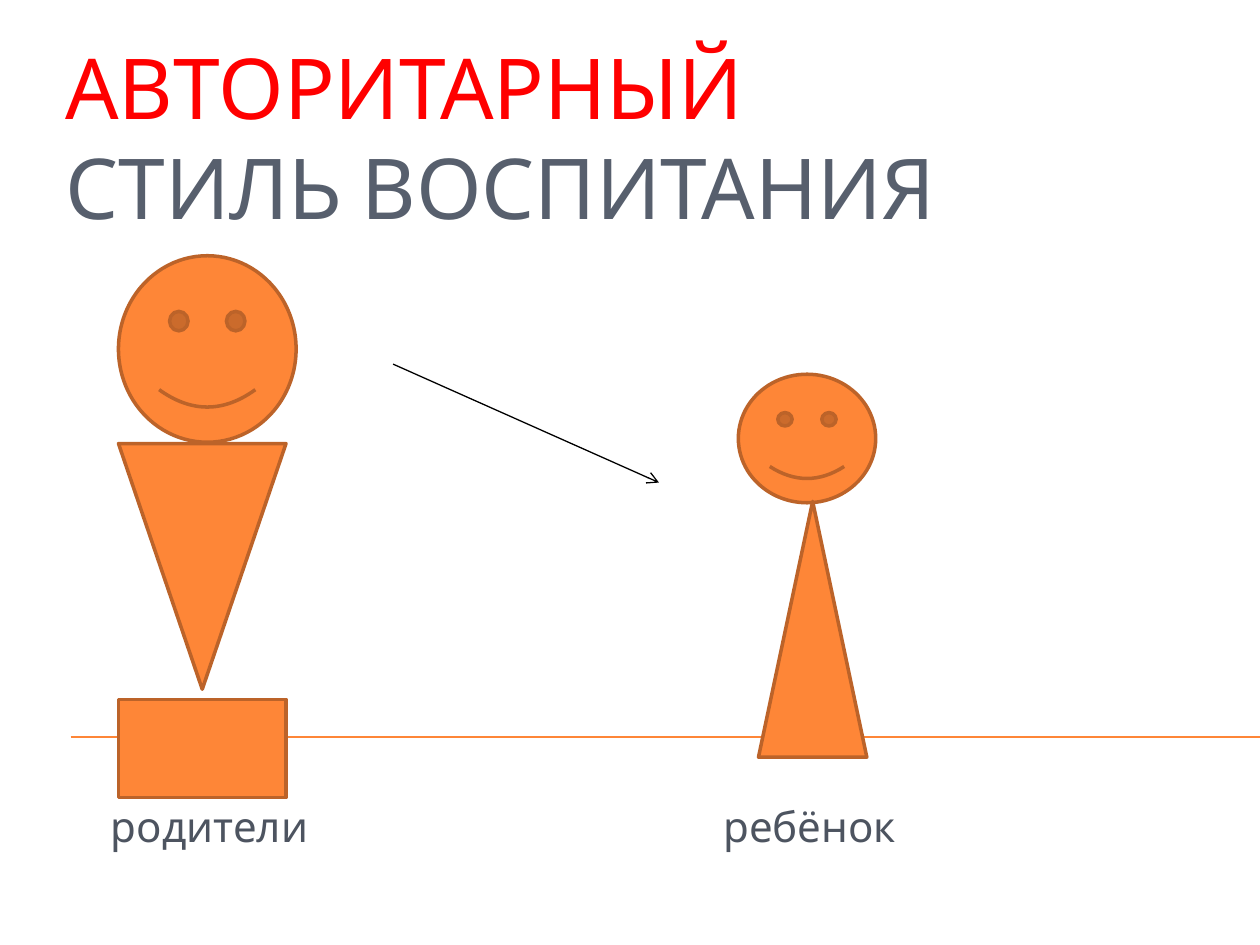
from typing import NamedTuple

from lxml import etree
from pptx import Presentation
from pptx import util as u
from pptx.dml.color import RGBColor
from pptx.enum import shapes, text
from pptx.oxml.ns import qn

COLS, ROWS = 100, 75
CELL = u.Inches(0.1)
FONT = "Cabin"
COLORS = {
    "accent": "FF0000",
    "title": "575F6D",
    "label": "4D5460",
    "figure": "FE8637",
    "outline": "BC6329",
    "arrow": "000000",
}
SHAPE = shapes.MSO_SHAPE


class Box(NamedTuple):
    """Place on the grid, in columns and rows."""
    col: float
    row: float
    cols: float
    rows: float


class Part(NamedTuple):
    kind: SHAPE
    box: Box
    rotation: int = 0


class Line(NamedTuple):
    start: tuple[float, float]
    end: tuple[float, float]
    color: str
    arrow: bool = False


GROUND = Line((5.6, 58.5), (COLS, 58.5), "figure")
GAZE = Line((31.2, 28.9), (52.3, 38.3), "arrow", arrow=True)
PARENT = [
    Part(SHAPE.SMILEY_FACE, Box(9.4, 20.3, 14.1, 14.8)),
    Part(SHAPE.ISOSCELES_TRIANGLE, Box(9.4, 35.2, 13.3, 19.5), 180),
    Part(SHAPE.RECTANGLE, Box(9.4, 55.5, 13.3, 7.8)),
]
CHILD = [
    Part(SHAPE.SMILEY_FACE, Box(58.6, 29.7, 10.9, 10.2)),
    Part(SHAPE.ISOSCELES_TRIANGLE, Box(60.2, 39.8, 8.6, 20.3)),
]


def grid(n: float) -> int:
    return round(n * CELL)


def rgb(name: str) -> RGBColor:
    return RGBColor.from_string(COLORS[name])


def add_text(slide, box: Box, runs: list[tuple[str, str]], *, size: float,
             anchor=text.MSO_ANCHOR.TOP, indent: float = 1, tab: float = 0):
    """Add one paragraph of (text, colour) runs; indent and tab are in columns."""
    sp = slide.shapes.add_textbox(*map(grid, box))
    tf = sp.text_frame
    tf.word_wrap = True
    tf.vertical_anchor = anchor
    tf.margin_left = grid(indent)
    p = tf.paragraphs[0]
    for i, (words, color) in enumerate(runs):
        if i:
            p.add_line_break()
        r = p.add_run()
        r.text = words
        r.font.name, r.font.size = FONT, u.Pt(size)
        r.font.color.rgb = rgb(color)
    if tab:
        stops = etree.SubElement(p._p.get_or_add_pPr(), qn("a:tabLst"))
        etree.SubElement(stops, qn("a:tab"), pos=str(grid(tab)), algn="l")


def add_line(slide, line: Line):
    sp = slide.shapes.add_connector(shapes.MSO_CONNECTOR.STRAIGHT,
                                    *map(grid, line.start + line.end))
    sp.line.color.rgb = rgb(line.color)
    sp.line.width = u.Pt(0.75)
    if line.arrow:
        etree.SubElement(sp.line._get_or_add_ln(), qn("a:tailEnd"), type="arrow")
    etree.SubElement(sp._element.spPr, qn("a:effectLst"))


def add_part(slide, part: Part):
    sp = slide.shapes.add_shape(part.kind, *map(grid, part.box))
    sp.rotation = part.rotation
    sp.shadow.inherit = False
    sp.fill.solid()
    sp.fill.fore_color.rgb = rgb("figure")
    sp.line.color.rgb = rgb("outline")
    sp.line.width = u.Pt(2)


def main():
    prs = Presentation()
    prs.slide_width, prs.slide_height = grid(COLS), grid(ROWS)
    slide = prs.slides.add_slide(prs.slide_layouts[6])

    add_line(slide, GROUND)
    add_text(slide, Box(4.2, 2.3, 92.5, 64.1),
             [("АВТОРИТАРНЫЙ", "accent"), ("СТИЛЬ ВОСПИТАНИЯ", "title")], size=48)
    add_text(slide, Box(4.2, 22.7, 92.5, 45.3), [("родители\tребёнок", "label")],
             size=24, anchor=text.MSO_ANCHOR.BOTTOM, indent=4.6, tab=48.6)
    for part in PARENT + CHILD:
        add_part(slide, part)
    add_line(slide, GAZE)

    prs.save("out.pptx")


if __name__ == "__main__":
    main()
